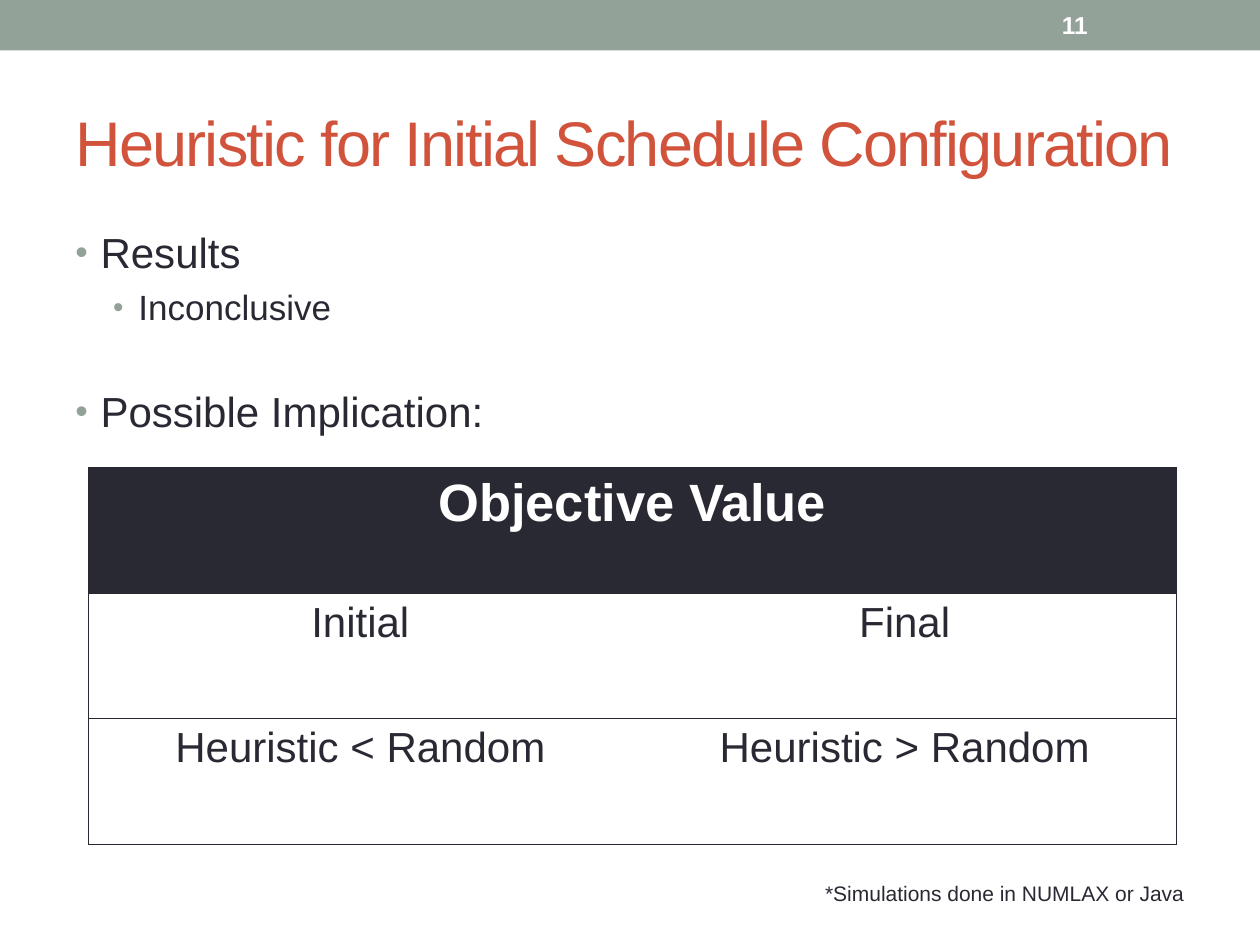
from dataclasses import dataclass

import pptx
import pptx.util
import pptx.dml.color
import pptx.enum.shapes
import pptx.enum.text
import pptx.oxml.ns
from lxml import etree
from pptx.util import Inches

RGB = pptx.dml.color.RGBColor.from_string
ALIGN = pptx.enum.text.PP_ALIGN
ANCHOR = pptx.enum.text.MSO_ANCHOR
qn = pptx.oxml.ns.qn


@dataclass(frozen=True)
class Theme:
    font: str = "Arial"
    ink: str = "292934"
    accent: str = "D2533C"
    sage: str = "93A299"
    white: str = "FFFFFF"
    title: int = 36
    table_head: int = 30
    body: int = 24
    sub: int = 20
    number: int = 14
    note: int = 12


T = Theme()


def write(p, text, size=T.body, color=T.ink, bold=False, align=ALIGN.LEFT):
    p.alignment = align
    r = p.add_run()
    r.text = text
    r.font.name = T.font
    r.font.size = pptx.util.Pt(size)
    r.font.bold = bold
    r.font.color.rgb = RGB(color)
    return r


def text_box(s, left, top, width, height, anchor=ANCHOR.TOP, wrap=True):
    tf = s.shapes.add_textbox(Inches(left), Inches(top), Inches(width), Inches(height)).text_frame
    tf.word_wrap = wrap
    tf.vertical_anchor = anchor
    return tf


prs = pptx.Presentation()
prs.slide_width, prs.slide_height = Inches(10), Inches(7.5)
s = prs.slides.add_slide(prs.slide_layouts[6])

# Top band and page number
band = s.shapes.add_shape(pptx.enum.shapes.MSO_SHAPE.RECTANGLE, 0, 0, prs.slide_width, Inches(0.4))
band.shadow.inherit = False
band.fill.solid()
band.fill.fore_color.rgb = RGB(T.sage)
band.line.fill.background()
tf = text_box(s, 8.33, 0.02, 1.17, 0.36, ANCHOR.MIDDLE)
write(tf.paragraphs[0], "11", T.number, T.white, bold=True)

# Title
tf = text_box(s, 0.5, 0.58, 9, 1.08, ANCHOR.MIDDLE)
r = write(tf.paragraphs[0], "Heuristic for Initial Schedule Configuration", T.title, T.accent)
r.font._element.set("spc", "-100")

# Bullets: text, level, size, indent in inches, space before in points
bullets = [
    ("Results", 0, T.body, 0.2, 0),
    ("Inconclusive", 1, T.sub, 0.5, 5),
    ("Possible Implication:", 0, T.body, 0.2, 33),
]
tf = text_box(s, 0.5, 1.75, 9, 5.33)
for i, (text, level, size, indent, before) in enumerate(bullets):
    p = tf.add_paragraph() if i else tf.paragraphs[0]
    p.level = level
    p.space_before = pptx.util.Pt(before)
    write(p, text, size)
    pPr = p._p.get_or_add_pPr()
    pPr.set("marL", str(Inches(indent)))
    pPr.set("indent", str(Inches(-0.2)))
    color = etree.SubElement(pPr, qn("a:buClr"))
    etree.SubElement(color, qn("a:srgbClr"), val=T.sage)
    etree.SubElement(pPr, qn("a:buSzPct"), val="85000")
    etree.SubElement(pPr, qn("a:buFont"), typeface=T.font)
    etree.SubElement(pPr, qn("a:buChar"), char="•")

# Objective value table: outer frame and row rules, no inner vertical line
rows = [
    ("Objective Value", ""),
    ("Initial", "Final"),
    ("Heuristic < Random", "Heuristic > Random"),
]
table = s.shapes.add_table(3, 2, Inches(0.7), Inches(3.71), Inches(8.64), Inches(2.99)).table
table.first_row = table.horz_banding = False
table.cell(0, 0).merge(table.cell(0, 1))
for i, row in enumerate(rows):
    head = i == 0
    for j, text in enumerate(row):
        cell = table.cell(i, j)
        if text:
            write(cell.text_frame.paragraphs[0], text, T.table_head if head else T.body,
                  T.white if head else T.ink, bold=head, align=ALIGN.CENTER)
        tcPr = cell._tc.get_or_add_tcPr()
        for side, drawn in (("L", j == 0), ("R", j == 1), ("T", True), ("B", True)):
            ln = etree.SubElement(tcPr, qn(f"a:ln{side}"), w=str(pptx.util.Pt(0.75)))
            if drawn:
                fill = etree.SubElement(ln, qn("a:solidFill"))
                etree.SubElement(fill, qn("a:srgbClr"), val=T.ink)
            else:
                etree.SubElement(ln, qn("a:noFill"))
        if head:
            cell.fill.solid()
            cell.fill.fore_color.rgb = RGB(T.ink)
        else:
            cell.fill.background()

# Footnote
tf = text_box(s, 6.45, 6.94, 3.08, 0.3, wrap=False)
tf.auto_size = pptx.enum.text.MSO_AUTO_SIZE.SHAPE_TO_FIT_TEXT
write(tf.paragraphs[0], "*Simulations done in NUMLAX or Java", T.note)

prs.save("out.pptx")
